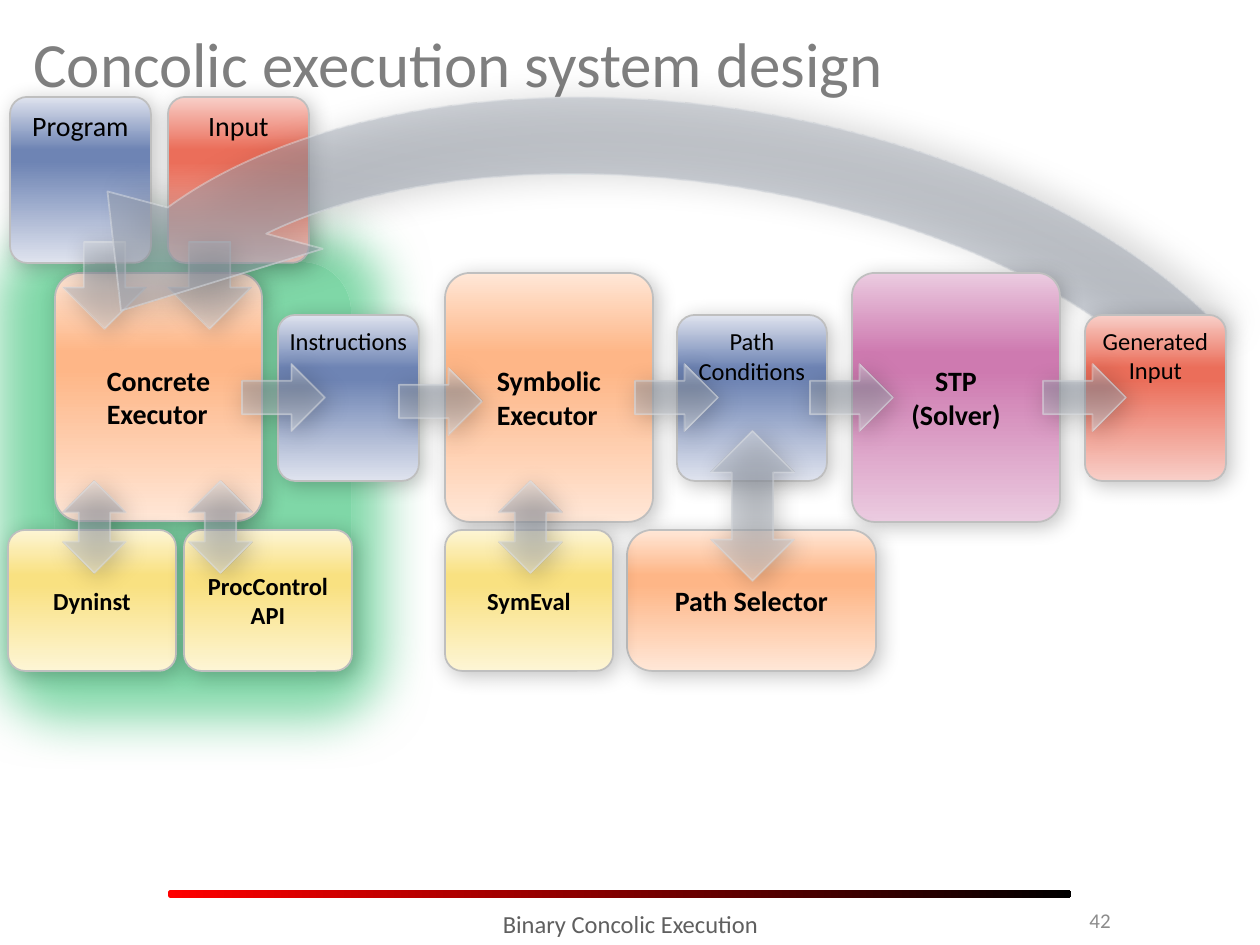
import pptx
import pptx.util
import pptx.dml.color
import pptx.enum.shapes
import pptx.enum.text
import pptx.oxml
import pptx.oxml.ns

RGB = pptx.dml.color.RGBColor
SHAPE = pptx.enum.shapes.MSO_SHAPE
ALIGN = pptx.enum.text.PP_ALIGN
ANCHOR = pptx.enum.text.MSO_ANCHOR
NS = pptx.oxml.ns.nsdecls("a")

BLACK, WHITE, RED = RGB(0, 0, 0), RGB(255, 255, 255), RGB(255, 0, 0)
GREEN = RGB(0x00, 0xB0, 0x50)
TITLE, NUMBER, FOOTER = RGB(0x7F, 0x7F, 0x7F), RGB(0x8C, 0x8C, 0x8C), RGB(0x5F, 0x5F, 0x5F)
BORDER = RGB(0xBF, 0xBF, 0xBF)
ORANGE = RGB(0xFF, 0xE7, 0xD7), RGB(0xFE, 0xB6, 0x87)
BLUE = RGB(0xDF, 0xE3, 0xEE), RGB(0x6E, 0x84, 0xB4)
CORAL = RGB(0xF8, 0xCF, 0xC8), RGB(0xEB, 0x6E, 0x5A)
PURPLE = RGB(0xEB, 0xCB, 0xE0), RGB(0xCE, 0x7A, 0xB0)
YELLOW = RGB(0xFD, 0xF5, 0xD5), RGB(0xF9, 0xE1, 0x81)
GRAY = RGB(0xDC, 0xDF, 0xE3), RGB(0x96, 0x9E, 0xAB)

EXECUTOR = dict(size=16, bold=True, anchor=ANCHOR.MIDDLE, center_block=True)
SOLVER = dict(size=16, bold=True, anchor=ANCHOR.MIDDLE, align=ALIGN.CENTER)
TOOL = dict(size=14, bold=True, anchor=ANCHOR.MIDDLE, align=ALIGN.CENTER, side=0)
DATA = dict(size=16, align=ALIGN.CENTER)
SMALL = dict(size=14, align=ALIGN.CENTER)
TIGHT = dict(SMALL, side=0)

DOWN, RIGHT, BOTH, LOOP = SHAPE.DOWN_ARROW, SHAPE.RIGHT_ARROW, SHAPE.UP_DOWN_ARROW, SHAPE.CIRCULAR_ARROW

LAYERS = [
    ("Concrete Executor", (55, 273, 207, 248), ORANGE, 0.12, EXECUTOR),
    ("Program", (10, 97, 141, 166), BLUE, 0.12, DATA),
    ("Input", (168, 97, 141, 166), CORAL, 0.12, DATA),
    (DOWN, (63, 242, 83, 87)),
    (DOWN, (168, 242, 83, 87)),
    (LOOP, (-20, 32, 1407, 857)),
    ("Instructions", (278, 315, 141, 166), BLUE, 0.12, TIGHT),
    ("Generated Input", (1085, 315, 141, 166), CORAL, 0.12, TIGHT),
    ("Symbolic Executor", (445, 273, 208, 249), ORANGE, 0.12, EXECUTOR),
    ("STP\n(Solver)", (852, 273, 208, 249), PURPLE, 0.11, SOLVER),
    ("Path Conditions", (677, 315, 150, 166), BLUE, 0.12, SMALL),
    ("Path Selector", (627, 530, 249, 141), ORANGE, 0.18, EXECUTOR),
    (RIGHT, (399, 368, 83, 67)),
    (RIGHT, (635, 364, 83, 67)),
    (RIGHT, (810, 364, 83, 67)),
    (RIGHT, (1043, 364, 83, 67)),
    (BOTH, (711, 431, 83, 150)),
    (RIGHT, (242, 364, 83, 67)),
    ("SymEval", (445, 530, 168, 141), YELLOW, 0.12, TOOL),
    ("Dyninst", (8, 530, 168, 141), YELLOW, 0.12, TOOL),
    ("ProcControl\nAPI", (184, 530, 168, 141), YELLOW, 0.12, TOOL),
    (BOTH, (499, 481, 63, 92)),
    (BOTH, (63, 481, 63, 92)),
    (BOTH, (189, 481, 63, 92)),
]

LABELS = [
    ("Concolic execution system design", (21, 10, 1218, 105),
     dict(size=36, color=TITLE, anchor=ANCHOR.MIDDLE)),
    ("42", (955, 895, 168, 50),
     dict(size=12, color=NUMBER, anchor=ANCHOR.MIDDLE, align=ALIGN.RIGHT)),
    ("Binary Concolic Execution", (305, 903, 651, 42),
     dict(size=14, color=FOOTER, align=ALIGN.CENTER)),
]


def px(n):
    return pptx.util.Emu(round(n * 914400 / 126))


def alpha_xml(percent):
    return f'<a:alpha {NS} val="{percent * 1000}"/>'


def add_alpha(fill_parent, percent):
    for color in fill_parent.iter(pptx.oxml.ns.qn("a:srgbClr")):
        color.append(pptx.oxml.parse_xml(alpha_xml(percent)))


def add_gradient(s, stops, angle, alpha=100):
    s.fill.gradient()
    grad = s.fill._xPr.find(pptx.oxml.ns.qn("a:gradFill"))
    items = "".join(
        f'<a:gs pos="{pos * 1000}"><a:srgbClr val="{color}">{alpha_xml(alpha)}</a:srgbClr></a:gs>'
        for pos, color in stops)
    new = pptx.oxml.parse_xml(
        f'<a:gradFill {NS} rotWithShape="1"><a:gsLst>{items}</a:gsLst>'
        f'<a:lin ang="{angle * 60000}" scaled="0"/></a:gradFill>')
    grad.getparent().replace(grad, new)


def add_shadow(s, color, alpha, blur, dist, angle, scale=100):
    effects = s._element.spPr.find(pptx.oxml.ns.qn("a:effectLst"))
    effects.append(pptx.oxml.parse_xml(
        f'<a:outerShdw {NS} blurRad="{blur * 12700}" dist="{dist * 12700}" dir="{angle * 60000}" '
        f'sx="{scale * 1000}" sy="{scale * 1000}" algn="tl" rotWithShape="0">'
        f'<a:srgbClr val="{color}">{alpha_xml(alpha)}</a:srgbClr></a:outerShdw>'))


def add_shape(slide, kind, box, line=None):
    s = slide.shapes.add_shape(kind, *map(px, box))
    s.shadow.inherit = False
    if line is None:
        s.line.fill.background()
    else:
        s.line.color.rgb = line
        s.line.width = pptx.util.Pt(1)
    return s


def set_text(s, text, size=14, color=BLACK, bold=False, align=ALIGN.LEFT,
             anchor=ANCHOR.TOP, side=0.1, center_block=False):
    tf = s.text_frame
    tf.word_wrap = True
    tf.vertical_anchor = anchor
    tf.margin_left = tf.margin_right = pptx.util.Inches(side)
    if center_block:
        tf._txBody.bodyPr.set("anchorCtr", "1")
    p = tf.paragraphs[0]
    p.text = text.replace("\n", "\v")
    p.alignment = align
    for r in p.runs:
        r.font.name = "Calibri"
        r.font.size = pptx.util.Pt(size)
        r.font.bold = bold
        r.font.color.rgb = color


def add_box(slide, text, box, colors, radius, style):
    outer, middle = colors
    s = add_shape(slide, SHAPE.ROUNDED_RECTANGLE, box, BORDER)
    s.adjustments[0] = radius
    add_gradient(s, [(0, outer), (32, middle), (39, middle), (100, outer)], 90)
    add_shadow(s, BLACK, 23, 12, 3, 45)
    set_text(s, text, **style)


def add_arrow(slide, kind, box):
    outer, middle = GRAY
    s = add_shape(slide, kind, box, outer)
    add_alpha(s.line._ln, 50)
    add_gradient(s, [(0, outer), (32, middle), (38, middle), (100, outer)], 90, 50)
    if kind == LOOP:
        for i, value in enumerate((0.09, 7.35, 204.56, 121.58, 0.13)):
            s.adjustments[i] = value
        s.rotation = 8.1
        s._element.spPr.xfrm.set("flipH", "1")
        add_shadow(s, BLACK, 31, 21, 13, 4)
    else:
        add_shadow(s, BLACK, 40, 14, 3, 45)


def main():
    prs = pptx.Presentation()
    prs.slide_width, prs.slide_height = px(1260), px(945)
    slide = prs.slides.add_slide(prs.slide_layouts[6])

    bar = add_shape(slide, SHAPE.ROUNDED_RECTANGLE, (168, 890, 903, 8))
    bar.adjustments[0] = 0.33
    add_gradient(bar, [(0, RED), (100, BLACK)], 0)

    for color in (WHITE, GREEN):
        s = add_shape(slide, SHAPE.ROUNDED_RECTANGLE, (55, 262, 296, 372))
        s.fill.solid()
        s.fill.fore_color.rgb = color
        if color == WHITE:
            add_shadow(s, GREEN, 50, 30, 36, 205, 130)
        else:
            add_alpha(s._element.spPr, 50)

    for text, box, style in LABELS:
        set_text(slide.shapes.add_textbox(*map(px, box)), text, **style)

    for layer in LAYERS:
        if isinstance(layer[0], str):
            add_box(slide, *layer)
        else:
            add_arrow(slide, *layer)

    prs.save("out.pptx")


if __name__ == "__main__":
    main()
